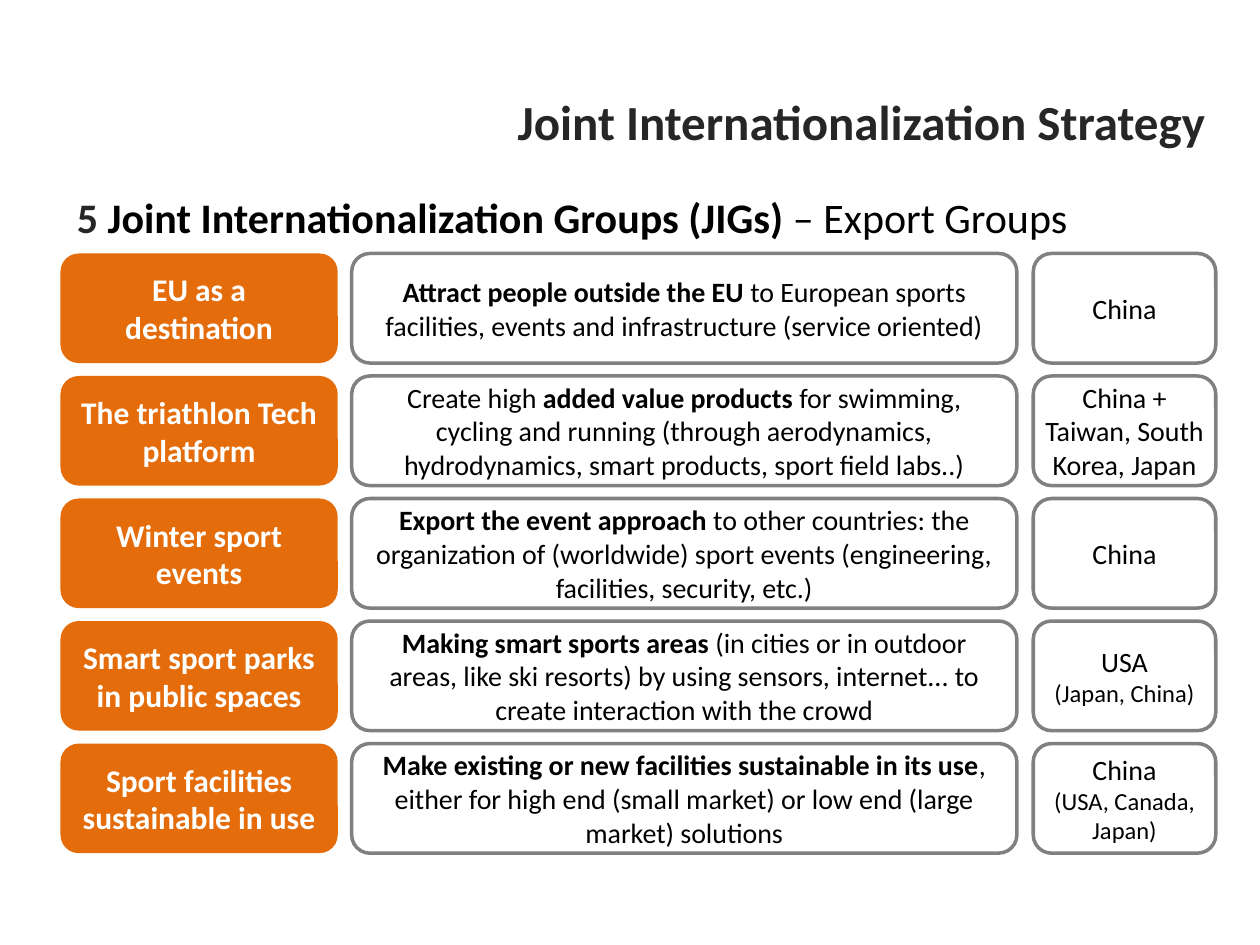
from dataclasses import dataclass

from pptx import Presentation
from pptx.dml.color import RGBColor as Color
from pptx.enum.shapes import MSO_SHAPE as Preset
from pptx.enum.text import MSO_ANCHOR as Anchor, PP_ALIGN as Align
from pptx.util import Cm, Pt


@dataclass(frozen=True)
class Theme:
    font: str = "Calibri"
    accent: str = "E46C0A"
    border: str = "808080"
    heading: str = "262626"
    body: str = "000000"
    inverse: str = "FFFFFF"
    title_size: int = 28
    subtitle_size: int = 24
    label_size: int = 18
    body_size: int = 16
    note_size: int = 14


THEME = Theme()


def styled(text, size=THEME.body_size, color=THEME.body, bold=False):
    return text, size, color, bold


@dataclass
class SlideBuilder:
    theme: Theme
    slide: object

    def fill_text(self, frame, paragraphs, align, spacing=None):
        frame.word_wrap = True
        for index, runs in enumerate(paragraphs):
            paragraph = frame.add_paragraph() if index else frame.paragraphs[0]
            paragraph.alignment = align
            if spacing:
                paragraph.space_after = Pt(spacing)
            for text, size, color, bold in runs:
                run = paragraph.add_run()
                run.text = text
                run.font.name = self.theme.font
                run.font.size = Pt(size)
                run.font.bold = bold
                run.font.color.rgb = Color.from_string(color)

    def text(self, box, runs, align, spacing=None):
        shape = self.slide.shapes.add_textbox(*map(Cm, box))
        self.fill_text(shape.text_frame, [runs], align, spacing)

    def card(self, box, paragraphs, fill=None, line=None, side_margin=0.25):
        shape = self.slide.shapes.add_shape(Preset.ROUNDED_RECTANGLE, *map(Cm, box))
        shape.shadow.inherit = False
        if fill:
            shape.fill.solid()
            shape.fill.fore_color.rgb = Color.from_string(fill)
        else:
            shape.fill.background()
        if line:
            shape.line.color.rgb = Color.from_string(line)
            shape.line.width = Pt(2)
        else:
            shape.line.fill.background()
        frame = shape.text_frame
        frame.vertical_anchor = Anchor.MIDDLE
        frame.margin_left = frame.margin_right = Cm(side_margin)
        self.fill_text(frame, paragraphs, Align.CENTER)


def strong(text):
    return styled(text, bold=True)


def market(country, note=None):
    paragraphs = [[styled(country)]]
    if note:
        paragraphs.append([styled(note, size=THEME.note_size)])
    return paragraphs


GROUPS = [
    ("EU as a destination",
     [strong("Attract people outside the EU "),
      styled("to European sports facilities, events and infrastructure (service oriented)")],
     market("China")),
    ("The triathlon Tech platform",
     [styled("Create high "), strong("added value products "),
      styled("for swimming, cycling and running (through aerodynamics, "
             "hydrodynamics, smart products, sport field labs..)")],
     market("China + Taiwan, South Korea, Japan")),
    ("Winter sport events",
     [strong("Export the event approach"),
      styled(" to other countries: the organization of (worldwide) sport events "
             "(engineering, facilities, security, etc.)")],
     market("China")),
    ("Smart sport parks in public spaces",
     [strong("Making smart sports areas "),
      styled("(in cities or in outdoor areas, like ski resorts) by using sensors, "
             "internet... to create interaction with the crowd")],
     market("USA", "(Japan, China)")),
    ("Sport facilities sustainable in use",
     [strong("Make existing or new facilities sustainable in its use"),
      styled(", either for high end (small market) or low end (large market) solutions")],
     market("China", "(USA, Canada, Japan)")),
]

FIRST_TOP, ROW_STEP, ROW_HEIGHT = 5.11, 2.47, 2.21
LABEL_COLUMN, GOAL_COLUMN, MARKET_COLUMN = (1.22, 5.59), (7.09, 13.41), (20.83, 3.68)


def main():
    presentation = Presentation()
    presentation.slide_width, presentation.slide_height = Cm(25.4), Cm(19.05)
    builder = SlideBuilder(THEME, presentation.slides.add_slide(presentation.slide_layouts[6]))

    size = THEME.subtitle_size
    builder.text((1.3, 3.73, 22.81, 1.27), [
        styled("5 ", size=size, color=THEME.heading, bold=True),
        styled("Joint Internationalization Groups (JIGs) ", size=size, bold=True),
        styled("– Export Groups", size=size),
    ], Align.JUSTIFY, spacing=3)
    builder.text((2.9, 1.73, 21.64, 1.6), [
        styled("Joint Internationalization Strategy", size=THEME.title_size,
               color=THEME.heading, bold=True),
    ], Align.RIGHT)

    for row, (name, goal, markets) in enumerate(GROUPS):
        top = FIRST_TOP + row * ROW_STEP

        def cell(column):
            left, width = column
            return left, top, width, ROW_HEIGHT

        label = styled(name, size=THEME.label_size, color=THEME.inverse, bold=True)
        builder.card(cell(LABEL_COLUMN), [[label]], fill=THEME.accent)
        builder.card(cell(GOAL_COLUMN), [goal], line=THEME.border)
        builder.card(cell(MARKET_COLUMN), markets, line=THEME.border, side_margin=0)

    presentation.save("out.pptx")


if __name__ == "__main__":
    main()
